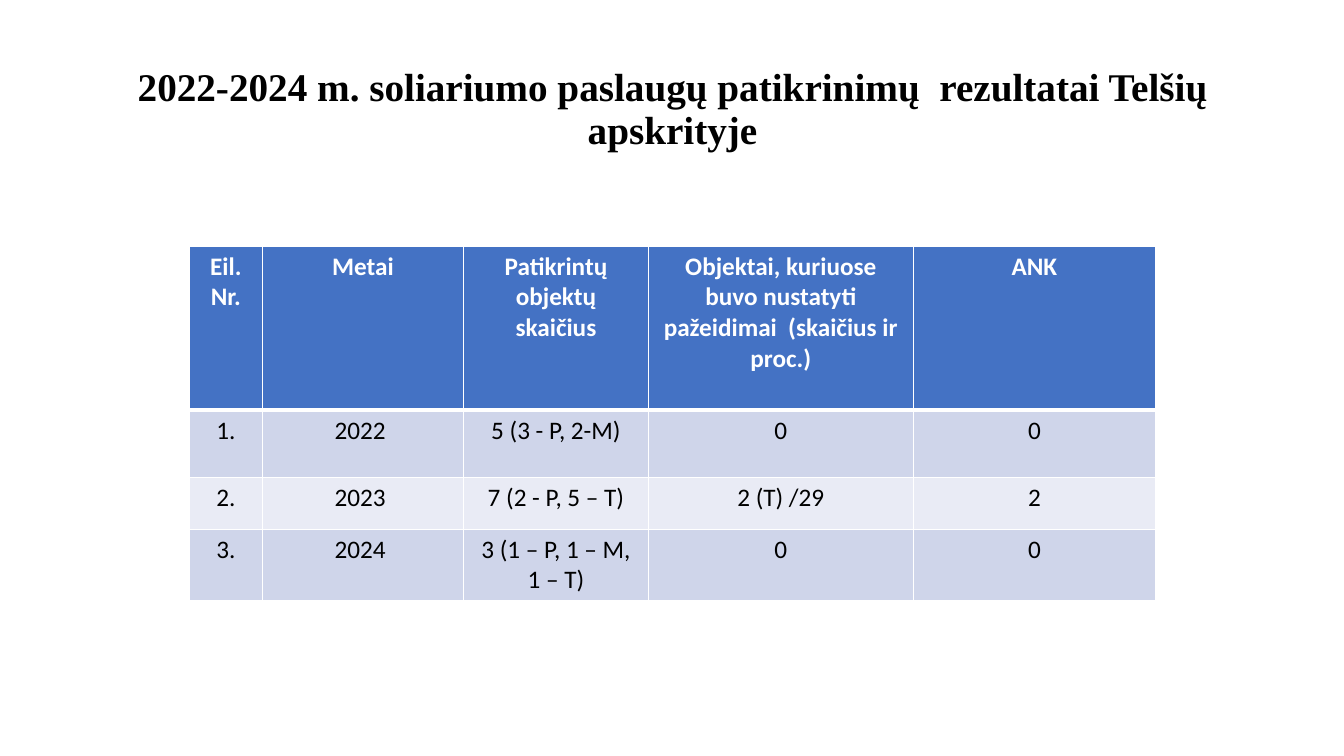
from lxml import etree
from pptx import Presentation
from pptx.dml.color import RGBColor
from pptx.enum.text import MSO_ANCHOR, MSO_AUTO_SIZE, PP_ALIGN
from pptx.oxml.ns import qn
from pptx.util import Pt

CENTER = PP_ALIGN.CENTER
MIDDLE = MSO_ANCHOR.MIDDLE
NO_AUTOFIT = MSO_AUTO_SIZE.NONE
EMU_PER_PX = 9144
TITLE_ONLY = 5
COLORS = {
    "black": "000000",
    "white": "FFFFFF",
    "header": "4472C4",
    "odd_row": "CFD5EA",
    "even_row": "E9EBF5",
}
TITLE = "2022-2024 m. soliariumo paslaugų patikrinimų  rezultatai Telšių apskrityje"
INSPECTIONS = [
    ["Eil. Nr.", "Metai", "Patikrintų objektų skaičius",
     "Objektai, kuriuose buvo nustatyti pažeidimai  (skaičius ir proc.)", "ANK"],
    ["1.", "2022 ", "5 (3 - P, 2-M)", "0", "0"],
    ["2.", "2023 ", "7 (2 - P, 5 – T)", "2 (T) /29", "2"],
    ["3.", "2024 ", "3 (1 – P, 1 – M, 1 – T)", "0", "0"],
]
COLUMN_WIDTHS = [72, 200, 183, 263, 240]
ROW_HEIGHTS = [163, 67, 51, 70]


def px(length):
    return length * EMU_PER_PX


def write_text(frame, text, size=18, font="Calibri", color="black", bold=False, spacing=1.0):
    paragraph = frame.paragraphs[0]
    paragraph.alignment = CENTER
    paragraph.line_spacing = spacing
    run = paragraph.add_run()
    run.text = text
    run.font.size = Pt(size)
    run.font.name = font
    run.font.bold = bold
    run.font.color.rgb = RGBColor.from_string(COLORS[color])


def set_borders(cell, top, bottom):
    properties = cell._tc.get_or_add_tcPr()
    widths = {"a:lnL": 1, "a:lnR": 1, "a:lnT": top, "a:lnB": bottom}
    for position, (side, width) in enumerate(widths.items()):
        border = etree.Element(qn(side), w=str(Pt(width)))
        fill = etree.SubElement(border, qn("a:solidFill"))
        etree.SubElement(fill, qn("a:srgbClr"), val=COLORS["white"])
        properties.insert(position, border)


def add_title(slide, left, top, width, height):
    title = slide.shapes.title
    title.left, title.top = px(left), px(top)
    title.width, title.height = px(width), px(height)
    frame = title.text_frame
    frame.word_wrap = True
    frame.auto_size = NO_AUTOFIT
    frame.vertical_anchor = MIDDLE
    write_text(frame, TITLE, size=28, font="Times New Roman", bold=True, spacing=0.9)


def add_inspections(slide, left, top, width, height):
    table = slide.shapes.add_table(
        len(ROW_HEIGHTS), len(COLUMN_WIDTHS), px(left), px(top), px(width), px(height)
    ).table
    for column, column_width in zip(table.columns, COLUMN_WIDTHS):
        column.width = px(column_width)
    for row, row_height in zip(table.rows, ROW_HEIGHTS):
        row.height = px(row_height)
    for r, values in enumerate(INSPECTIONS):
        is_header = r == 0
        fill = "header" if is_header else "odd_row" if r % 2 else "even_row"
        for c, value in enumerate(values):
            cell = table.cell(r, c)
            cell.fill.solid()
            cell.fill.fore_color.rgb = RGBColor.from_string(COLORS[fill])
            set_borders(cell, top=3 if r == 1 else 1, bottom=3 if is_header else 1)
            write_text(cell.text_frame, value, bold=is_header,
                       color="white" if is_header else "black")


def main():
    presentation = Presentation()
    presentation.slide_width = px(1333)
    presentation.slide_height = px(750)
    slide = presentation.slides.add_slide(presentation.slide_layouts[TITLE_ONLY])
    add_title(slide, 92, 40, 1150, 139)
    add_inspections(slide, 188, 244, sum(COLUMN_WIDTHS), sum(ROW_HEIGHTS))
    presentation.save("out.pptx")


if __name__ == "__main__":
    main()
